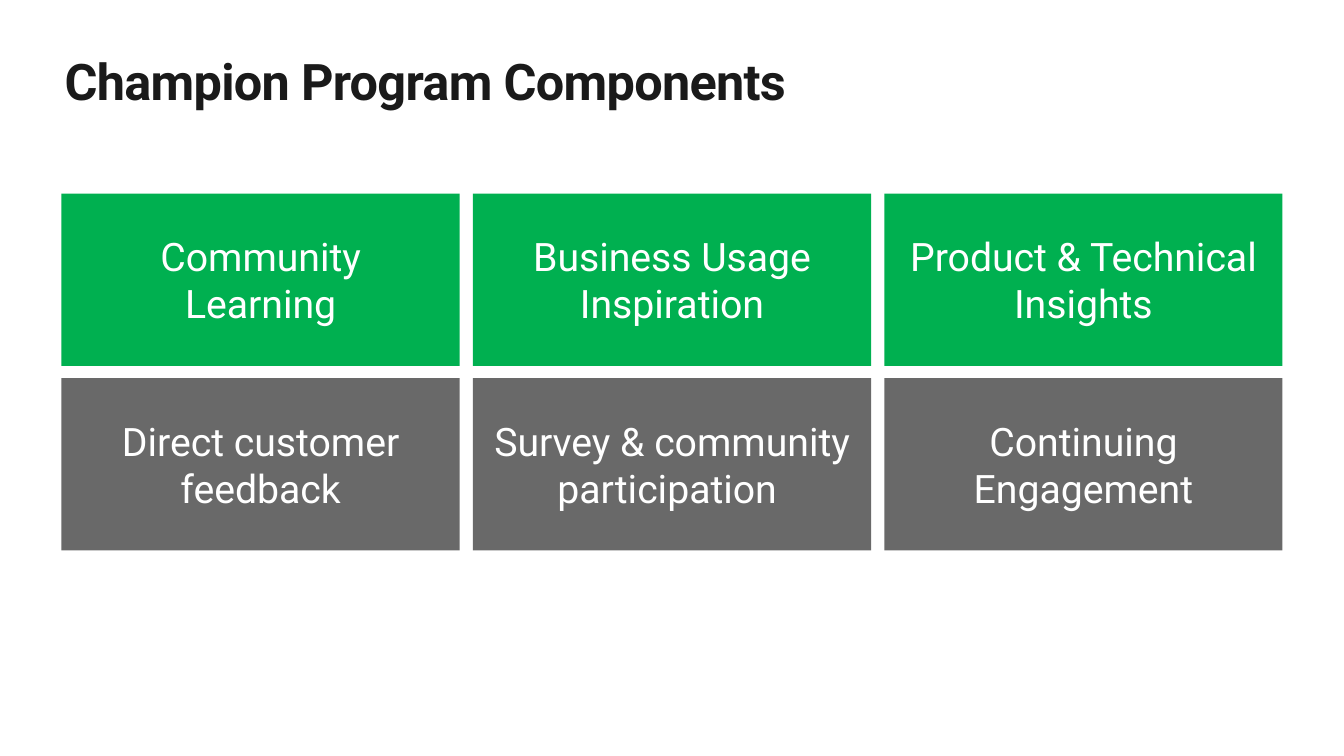
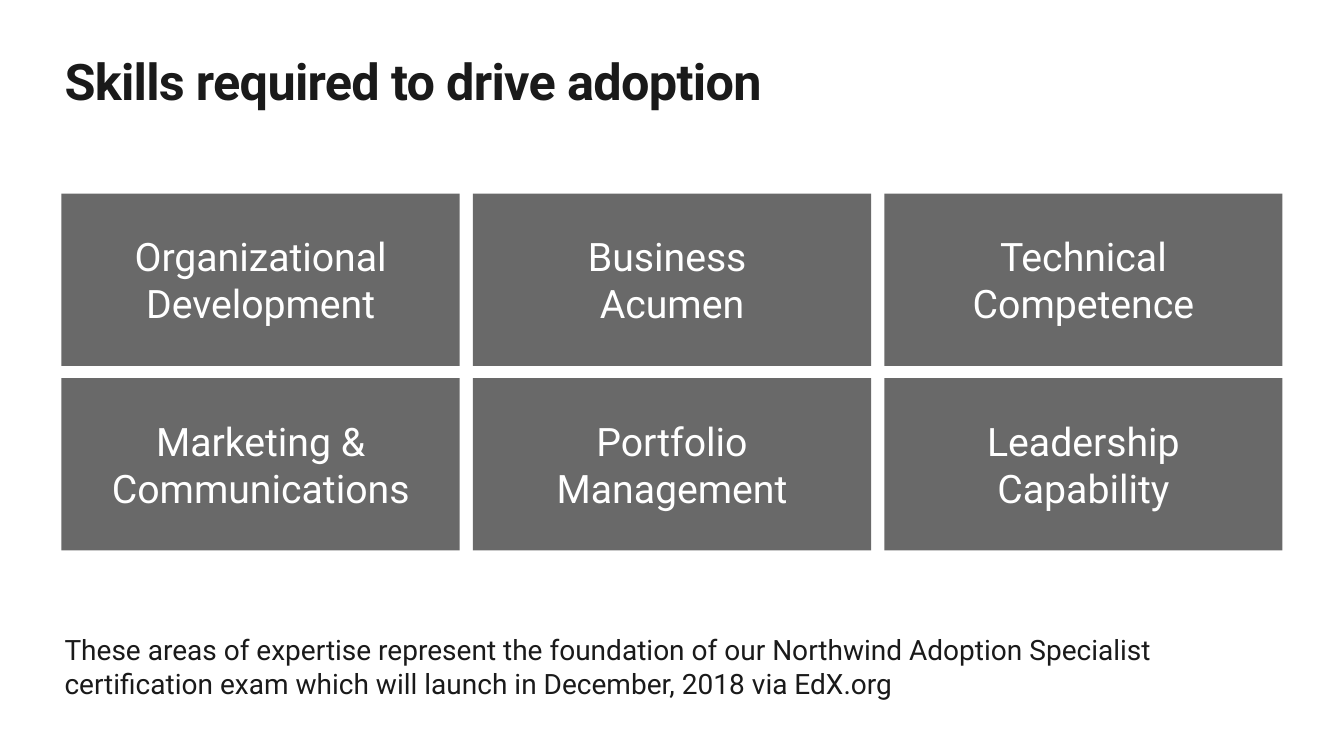
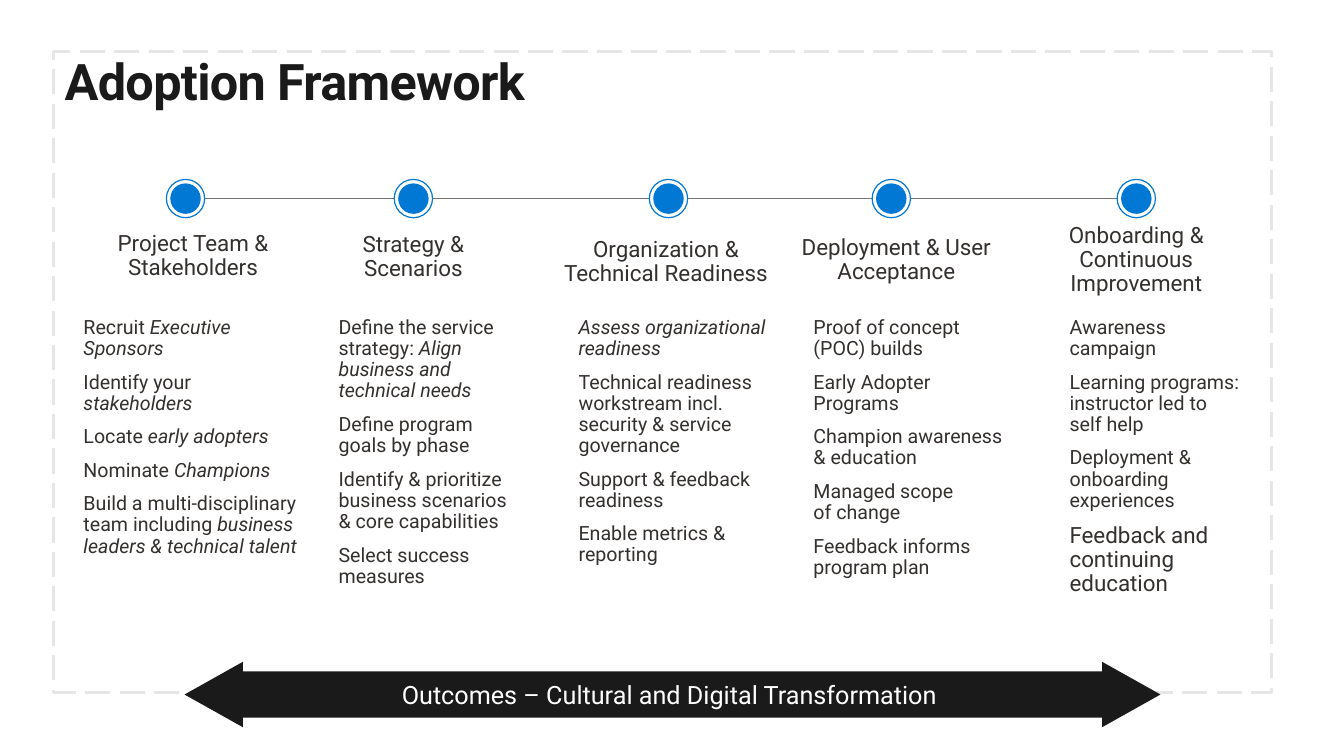
from lxml import etree
from pptx import Presentation
from pptx.dml.color import RGBColor
from pptx.enum import dml, shapes, text
from pptx.oxml.ns import qn
from pptx.util import Emu, Pt

# Shared look
FONT = "Roboto"
INK, BODY, WHITE = "1A1A1A", "33302E", "FFFFFF"
GREEN, GRAY, BLUE = "00B050", "696969", "0078D4"
RULE, FRAME = "737373", "E6E6E6"
LEFT, CENTER = text.PP_ALIGN.LEFT, text.PP_ALIGN.CENTER
TOP, MIDDLE = text.MSO_ANCHOR.TOP, text.MSO_ANCHOR.MIDDLE
SHAPE = shapes.MSO_SHAPE


def px(length):
    """100 px to the inch."""
    return Emu(int(length * 9144))


def color(hex_value):
    return RGBColor.from_string(hex_value)


def write(shape, paragraphs, size=14, fill=BODY, bold=False, align=LEFT,
          anchor=TOP, inset=(10, 5), leading=None, before=0, tracking=None,
          last_size=None):
    """Fill a shape with text; *stars* mark italics, a newline breaks a line."""
    frame = shape.text_frame
    frame.word_wrap = True
    frame.vertical_anchor = anchor
    frame.margin_left = frame.margin_right = px(inset[0])
    frame.margin_top = frame.margin_bottom = px(inset[1])
    for index, content in enumerate(paragraphs):
        para = frame.add_paragraph() if index else frame.paragraphs[0]
        para.alignment = align
        para.space_before = Pt(before if index else 0)
        if leading:
            para.line_spacing = leading
        is_last = index == len(paragraphs) - 1
        for part, styled in enumerate(content.split("*")):
            for row, words in enumerate(styled.split("\n")):
                if row:
                    para.add_line_break()
                if not words:
                    continue
                span = para.add_run()
                span.text = words
                span.font.name = FONT
                span.font.size = Pt(last_size if last_size and is_last else size)
                span.font.bold = bold
                span.font.italic = part % 2 == 1
                span.font.color.rgb = color(fill)
                if tracking:
                    span.font._element.set("spc", str(int(tracking * 100)))


def add_text(page, box, paragraphs, **style):
    shape = page.shapes.add_textbox(*map(px, box))
    write(shape, paragraphs, **style)


def add_block(page, kind, box, fill=None, line=None, width=1.0, dash=None, turn=0):
    shape = page.shapes.add_shape(kind, *map(px, box))
    shape.shadow.inherit = False
    shape.rotation = turn
    if fill:
        shape.fill.solid()
        shape.fill.fore_color.rgb = color(fill)
    else:
        shape.fill.background()
    if line:
        shape.line.color.rgb = color(line)
        shape.line.width = Pt(width)
        if dash:
            shape.line.dash_style = dash
    else:
        shape.line.fill.background()
    return shape


def add_rule(page, start, end, y):
    rule = page.shapes.add_connector(shapes.MSO_CONNECTOR.STRAIGHT,
                                     px(start), px(y), px(end), px(y))
    rule.line.color.rgb = color(RULE)
    rule.line.width = Pt(1.25)
    etree.SubElement(rule._element.spPr, qn("a:effectLst"))


def add_title(page, title):
    add_text(page, (64, 50, 1205, 61), [title], size=36, fill=INK, bold=True,
             inset=(0, 0), tracking=-0.5)


# Grid of labelled cards
def add_cards(page, box, rows, gaps=(13, 12)):
    left, top, width, height = box
    for row, (fill, labels) in enumerate(rows):
        card_height = (height - gaps[1] * (len(rows) - 1)) / len(rows)
        card_width = (width - gaps[0] * (len(labels) - 1)) / len(labels)
        for column, label in enumerate(labels):
            card = add_block(page, SHAPE.RECTANGLE,
                             (left + column * (card_width + gaps[0]),
                              top + row * (card_height + gaps[1]),
                              card_width, card_height), fill)
            write(card, [label], size=28, fill=WHITE, align=CENTER,
                  anchor=MIDDLE, inset=(20, 16))


def card_slide(page, title, rows, note=None):
    add_title(page, title)
    add_cards(page, (61, 192, 1211, 354), rows)
    if note:
        add_text(page, (64, 628, 1197, 67), [note], size=20, fill=INK, inset=(0, 0))


# Timeline of stages
RING, DOT = 38, 29


def add_marker(page, x, y):
    for size, fill in ((RING, None), (DOT, BLUE)):
        add_block(page, SHAPE.OVAL, (x - size / 2, y - size / 2, size, size),
                  fill, BLUE, 0.85)


def add_timeline(page, stages, y, list_top):
    centers = [stage[0] for stage in stages]
    for start, end in zip(centers, centers[1:]):
        add_rule(page, start + RING / 2, end - RING / 2, y)
    for center, heading, heading_box, list_box, items, last_size in stages:
        add_marker(page, center, y)
        add_text(page, heading_box, [heading], size=16, align=CENTER,
                 anchor=MIDDLE, leading=0.9)
        left, width, height = list_box
        add_text(page, (left, list_top, width, height), items, leading=0.9,
                 before=8.8, last_size=last_size)


# Bar with a head at each end
def add_outcome_arrow(page, box, label, head=(65, 58)):
    left, top, width, height = box
    bar = add_block(page, SHAPE.RECTANGLE, box, INK)
    write(bar, [label], size=18, fill=WHITE, align=CENTER, anchor=MIDDLE)
    base, depth = head
    for center, turn in ((left - depth / 2, 270), (left + width + depth / 2, 90)):
        add_block(page, SHAPE.ISOSCELES_TRIANGLE,
                  (center - base / 2, top + height / 2 - depth / 2, base, depth),
                  INK, turn=turn)


def framework_slide(page, title, stages, outcome):
    add_block(page, SHAPE.RECTANGLE, (53, 51, 1208, 636), line=FRAME, width=2.25,
              dash=dml.MSO_LINE.LONG_DASH)
    add_timeline(page, stages, 197, 310)
    add_outcome_arrow(page, (241, 666, 852, 46), outcome)
    add_title(page, title)


# Center, heading, heading box, list (left, width, height), items, last item size
STAGES = [
    (184, "Project Team & Stakeholders", (86, 225, 211, 59), (73, 236, 251),
     ["Recruit *Executive Sponsors*", "Identify your *stakeholders*",
      "Locate *early adopters*", "Nominate *Champions*",
      "Build a multi-disciplinary team including "
      "*business leaders & technical talent*"], None),
    (410, "Strategy & Scenarios", (305, 226, 210, 59), (326, 188, 281),
     ["Define the service strategy: *Align business and technical needs*",
      "Define program goals by phase",
      "Identify & prioritize business scenarios & core capabilities",
      "Select success measures"], None),
    (663, "Organization & Technical Readiness", (540, 231, 241, 59), (564, 210, 260),
     ["*Assess organizational readiness*",
      "Technical readiness workstream incl. security & service governance",
      "Support & feedback readiness", "Enable metrics & reporting"], None),
    (884, "Deployment & User Acceptance", (784, 229, 210, 59), (797, 210, 374),
     ["Proof of concept\n(POC) builds", "Early Adopter Programs",
      "Champion awareness & education", "Managed scope\nof change",
      "Feedback informs program plan"], None),
    (1127, "Onboarding & Continuous Improvement", (1026, 217, 202, 83), (1051, 191, 290),
     ["Awareness campaign", "Learning programs: instructor led to self help",
      "Deployment & onboarding experiences",
      "Feedback and continuing education"], 16),
]


def main():
    deck = Presentation()
    deck.slide_width, deck.slide_height = px(1333), px(750)
    blank = deck.slide_layouts[6]

    card_slide(deck.slides.add_slide(blank), "Champion Program Components", [
        (GREEN, ["Community Learning", "Business Usage Inspiration",
                 "Product & Technical Insights"]),
        (GRAY, ["Direct customer feedback", "Survey & community participation ",
                "Continuing Engagement"]),
    ])
    card_slide(deck.slides.add_slide(blank), "Skills required to drive adoption", [
        (GRAY, ["Organizational Development", "Business \nAcumen",
                "Technical Competence"]),
        (GRAY, ["Marketing & Communications", "Portfolio Management",
                "Leadership\nCapability"]),
    ], "These areas of expertise represent the foundation of our Northwind Adoption "
       "Specialist certification exam which will launch in December, 2018 via EdX.org")
    framework_slide(deck.slides.add_slide(blank), "Adoption Framework", STAGES,
                    "Outcomes – Cultural and Digital Transformation ")
    deck.save("out.pptx")


if __name__ == "__main__":
    main()
